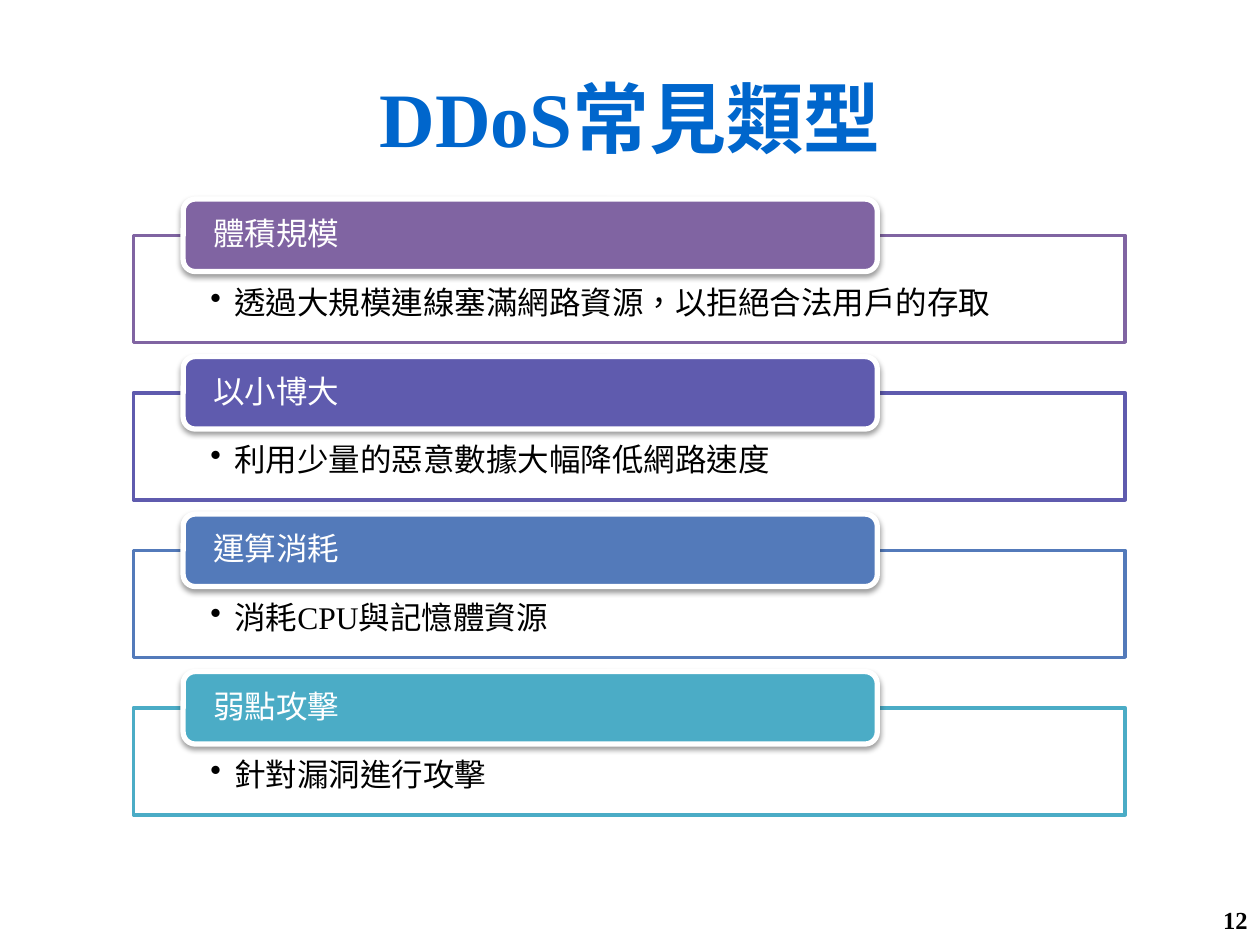
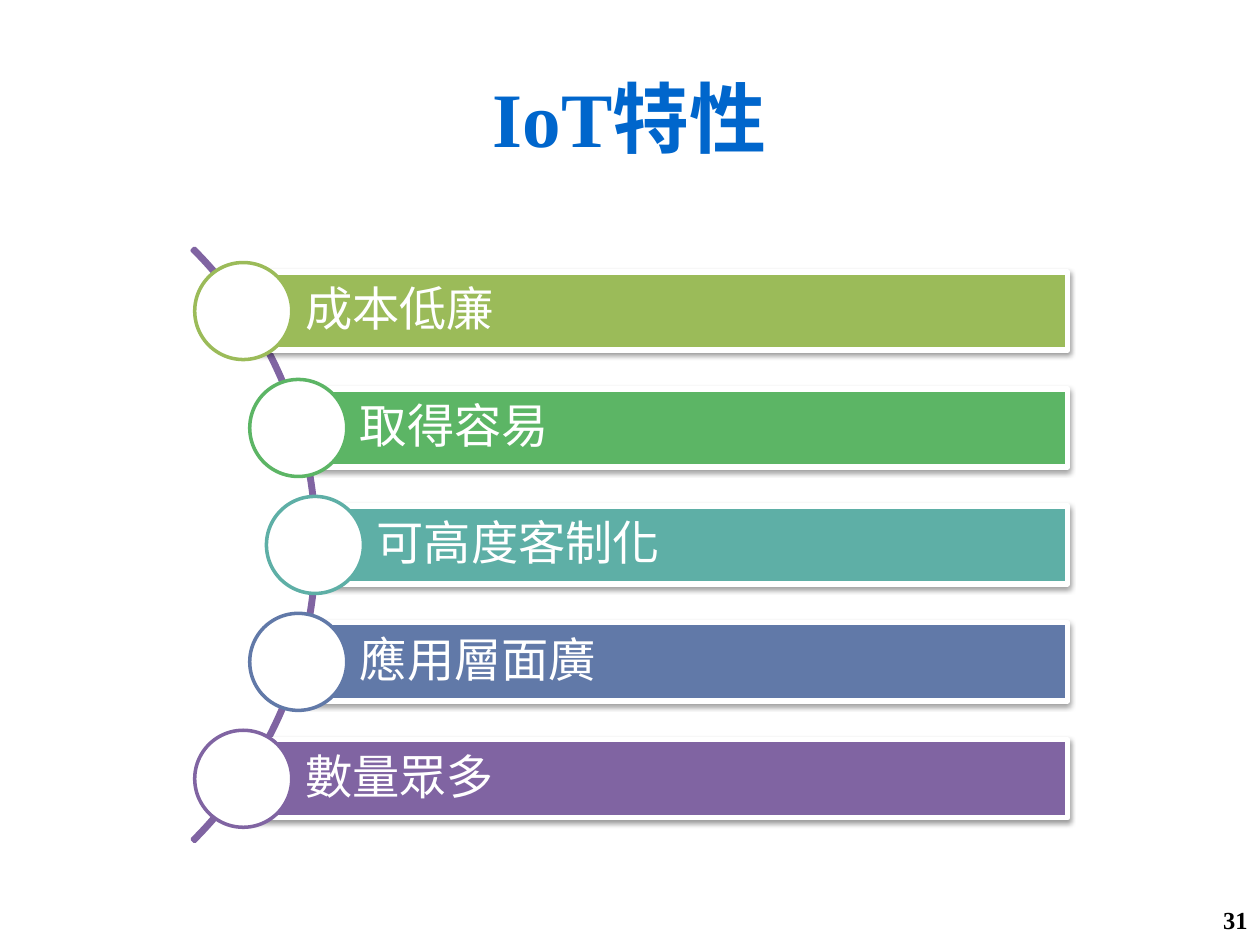
import math
from collections import namedtuple
from dataclasses import dataclass

import pptx
import pptx.dml.color
import pptx.enum.shapes
import pptx.enum.text
import pptx.oxml.ns
import pptx.util
from lxml import etree

SHAPE = pptx.enum.shapes.MSO_SHAPE
ALIGN = pptx.enum.text.PP_ALIGN
ANCHOR = pptx.enum.text.MSO_ANCHOR
inch = pptx.util.Inches
rgb = pptx.dml.color.RGBColor.from_string

WIDE, HIGH = 10, 7.5
COLS, ROWS = 100, 75

# Boxes are measured in grid columns and rows.
Box = namedtuple("Box", "x y w h")
HEAD = Box(5, 3, 90, 12.5)
FOOT = Box(76.7, 71, 23.3, 4)
CARDS = Box(10.6, 15.8, 78.7, 50)
BEADS = Box(15.4, 20.05, 69.35, 46.4)


@dataclass(frozen=True)
class Theme:
    face: str = "Times New Roman"
    blue: str = "0066CC"
    ink: str = "000000"
    paper: str = "FFFFFF"
    arc: str = "8064A2"
    title: int = 44
    item: int = 27
    body: int = 18
    page: int = 14
    edge: int = 2
    rim: int = 3


LOOK = Theme()

TYPES = [
    ("體積規模", "透過大規模連線塞滿網路資源，以拒絕合法用戶的存取", "8064A2"),
    ("以小博大", "利用少量的惡意數據大幅降低網路速度", "5F5BAE"),
    ("運算消耗", "消耗CPU與記憶體資源", "537ABA"),
    ("弱點攻擊", "針對漏洞進行攻擊", "4BACC6"),
]
TRAITS = [
    ("成本低廉", "9BBB59"),
    ("取得容易", "5CB565"),
    ("可高度客制化", "5EAFA6"),
    ("應用層面廣", "6179A8"),
    ("數量眾多", "8064A2"),
]


def span(box):
    """Turn grid units into slide lengths."""
    col, row = WIDE / COLS, HIGH / ROWS
    return (inch(box.x * col), inch(box.y * row),
            inch(box.w * col), inch(box.h * row))


def part(box, x, y, w, h):
    """Take shares of a box."""
    return Box(box.x + x * box.w, box.y + y * box.h, w * box.w, h * box.h)


def split(box, count):
    """Cut a box into equal rows."""
    return [part(box, 0, i / count, 1, 1 / count) for i in range(count)]


def node(root, tag, **attrs):
    item = etree.SubElement(root, pptx.oxml.ns.qn(tag))
    for key, val in attrs.items():
        item.set(key, str(val))
    return item


def draw(slide, kind, box, fill, line, width):
    shape = slide.shapes.add_shape(kind, *span(box))
    shape.shadow.inherit = False
    shape.fill.solid()
    shape.fill.fore_color.rgb = rgb(fill)
    shape.line.color.rgb = rgb(line)
    shape.line.width = pptx.util.Pt(width)
    return shape


def shade(shape):
    """Give a shape a soft shadow below it."""
    root = shape.element.spPr.find(pptx.oxml.ns.qn("a:effectLst"))
    cast = node(root, "a:outerShdw", blurRad=40000, dist=20000,
                dir=5400000, rotWithShape=0)
    tone = node(cast, "a:srgbClr", val=LOOK.ink)
    node(tone, "a:alpha", val=38000)


def dot(para):
    """Give a paragraph a bullet with a hanging indent."""
    prop = para._p.get_or_add_pPr()
    prop.set("marL", str(inch(0.19)))
    prop.set("indent", str(-inch(0.19)))
    node(prop, "a:buChar", char="•")


def write(shape, text, size, color, bold=False, align=ALIGN.LEFT,
          anchor=ANCHOR.MIDDLE, pads=(0.1, 0.05, 0.1, 0.05), lead=1.0,
          mark=False):
    frame = shape.text_frame
    sides = ("left", "top", "right", "bottom")
    form = {"margin_" + side: inch(pad) for side, pad in zip(sides, pads)}
    form.update(word_wrap=True, vertical_anchor=anchor)
    para = frame.paragraphs[0]
    para.alignment = align
    para.line_spacing = lead
    if mark:
        dot(para)
    run = para.add_run()
    run.text = text
    run._r.get_or_add_rPr().set("lang", "zh-TW")
    run.font.color.rgb = rgb(color)
    font = {"name": LOOK.face, "size": pptx.util.Pt(size), "bold": bold}
    for goal, vals in ((frame, form), (run.font, font)):
        for key, val in vals.items():
            setattr(goal, key, val)


def start(deck, title, page):
    """Add a slide with its title and page number."""
    slide = deck.slides.add_slide(deck.slide_layouts[6])
    for box, text, size, color, align in (
            (HEAD, title, LOOK.title, LOOK.blue, ALIGN.CENTER),
            (FOOT, page, LOOK.page, LOOK.ink, ALIGN.RIGHT)):
        write(slide.shapes.add_textbox(*span(box)), text, size, color,
              bold=True, align=align)
    return slide


def cards(slide, box, items):
    """Stack outlined cards, each with a name tab on its top edge."""
    for row, (name, note, color) in zip(split(box, len(items)), items):
        card = draw(slide, SHAPE.RECTANGLE, part(row, 0, 0.23, 1, 0.68),
                    LOOK.paper, color, LOOK.edge)
        write(card, note, LOOK.body, LOOK.ink, anchor=ANCHOR.TOP,
              pads=(0.61, 0.41, 0.61, 0.14), lead=0.9, mark=True)
        tab = draw(slide, SHAPE.ROUNDED_RECTANGLE,
                   part(row, 0.05, 0, 0.7, 0.46),
                   color, LOOK.paper, LOOK.rim)
        shade(tab)
        write(tab, name, LOOK.body, LOOK.paper,
              pads=(0.21, 0, 0.21, 0), lead=0.9)


def beads(slide, box, items):
    """Hang bars on an arc, each starting at a round bead."""
    hub_x, hub_y = box.x - 23.5, box.y + box.h / 2
    reach, orbit = 33.3, 33.1
    bead, thick = 7.7, 6.2
    arc = draw(slide, SHAPE.BLOCK_ARC,
               Box(hub_x - reach, hub_y - reach, 2 * reach, 2 * reach),
               LOOK.arc, LOOK.arc, LOOK.edge)
    for i, val in enumerate((189, 27, 0.004)):
        arc.adjustments[i] = val
    for row, (name, color) in zip(split(box, len(items)), items):
        y = row.y + row.h / 2
        x = hub_x + math.sqrt(orbit ** 2 - (y - hub_y) ** 2)
        bar = draw(slide, SHAPE.RECTANGLE,
                   Box(x, y - thick / 2, box.x + box.w - x, thick),
                   color, LOOK.paper, LOOK.rim)
        shade(bar)
        write(bar, name, LOOK.item, LOOK.paper,
              pads=(0.49, 0.07, 0.07, 0.07), lead=0.9)
        draw(slide, SHAPE.OVAL,
             Box(x - bead / 2, y - bead / 2, bead, bead),
             LOOK.paper, color, LOOK.edge)


def main():
    deck = pptx.Presentation()
    deck.slide_width, deck.slide_height = inch(WIDE), inch(HIGH)
    cards(start(deck, "DDoS常見類型", "12"), CARDS, TYPES)
    beads(start(deck, "IoT特性", "31"), BEADS, TRAITS)
    deck.save("out.pptx")


if __name__ == "__main__":
    main()
